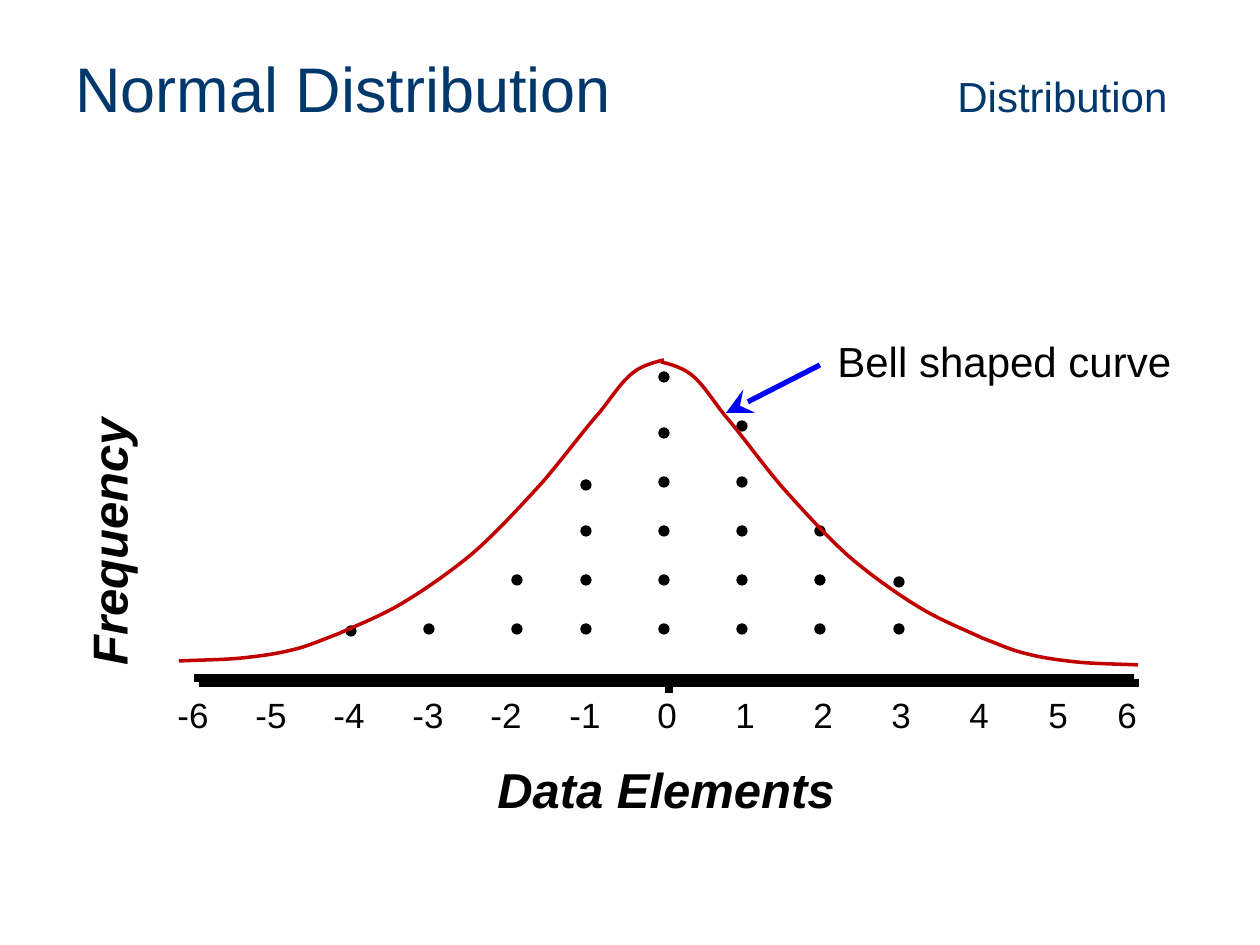
from lxml.etree import SubElement
from pptx import Presentation
from pptx.dml.color import RGBColor
from pptx.enum.shapes import MSO_CONNECTOR, MSO_SHAPE
from pptx.enum.text import MSO_ANCHOR, MSO_AUTO_SIZE, PP_ALIGN
from pptx.oxml.ns import qn
from pptx.util import Pt

PX = 914400 // 126
BLACK = RGBColor(0x00, 0x00, 0x00)
NAVY = RGBColor(0x00, 0x38, 0x6B)
BLUE = RGBColor(0x00, 0x00, 0xFF)
RED = RGBColor(0xC0, 0x00, 0x00)

prs = Presentation()
prs.slide_width, prs.slide_height = 1260 * PX, 945 * PX
s = prs.slides.add_slide(prs.slide_layouts[6])


def add_text(x, y, w, h, runs, align=PP_ALIGN.LEFT, color=BLACK, bold=None):
    """Add a one-paragraph text box; runs are (text, size) pairs."""
    sp = s.shapes.add_textbox(x * PX, y * PX, w * PX, h * PX)
    tf = sp.text_frame
    tf.word_wrap = True
    tf.auto_size = MSO_AUTO_SIZE.SHAPE_TO_FIT_TEXT
    p = tf.paragraphs[0]
    p.alignment = align
    for text, size in runs:
        r = p.add_run()
        r.text = text
        r.font.color.rgb = color
        fmt = {"name": "Arial", "size": Pt(size), "bold": bold, "italic": bold}
        for key, value in fmt.items():
            setattr(r.font, key, value)
    return sp


def add_line(x1, y1, x2, y2, color, width):
    """Add a straight line without a shadow."""
    cn = s.shapes.add_connector(MSO_CONNECTOR.STRAIGHT,
                                x1 * PX, y1 * PX, x2 * PX, y2 * PX)
    cn.line.color.rgb = color
    cn.line.width = Pt(width)
    SubElement(cn._element.spPr, qn("a:effectLst"))
    return cn


# Title, with the section name at a tab stop
sp = add_text(63, 38, 1134, 98, [("Normal Distribution", 36), ("\tDistribution", 24)],
              color=NAVY)
sp.text_frame.auto_size = MSO_AUTO_SIZE.NONE
sp.text_frame.vertical_anchor = MSO_ANCHOR.MIDDLE
pPr = sp.text_frame.paragraphs[0]._p.get_or_add_pPr()
tabs = SubElement(pPr, qn("a:tabLst"))
SubElement(tabs, qn("a:tab"), pos=str(882 * PX), algn="l")

# Axis
for x1, y1, x2, y2 in [(199, 683, 1139, 683), (669, 674, 669, 693),
                       (194, 678, 1134, 678)]:
    add_line(x1, y1, x2, y2, BLACK, 4.5)

# Dots: column left, number of dots, top of the highest dot
DOT, BASE, PITCH = 10, 624, 49
columns = [(346, 1, 626), (424, 1, 624), (512, 2, 575), (581, 4, 480),
           (659, 6, 372), (737, 5, 421), (815, 3, 526), (894, 2, 577)]
for x, count, top in columns:
    for y in [BASE - PITCH * i for i in range(count - 1)] + [top]:
        sp = s.shapes.add_shape(MSO_SHAPE.OVAL, x * PX, y * PX, DOT * PX, DOT * PX)
        sp.shadow.inherit = False
        sp.fill.solid()
        sp.fill.fore_color.rgb = BLACK
        sp.line.color.rgb = BLACK
        sp.line.width = Pt(0.75)

# Axis titles
sp = add_text(-51, 506, 319, 72, [("Frequency", 28)], PP_ALIGN.CENTER, bold=True)
sp.rotation = 270
add_text(200, 753, 932, 72, [("Data Elements", 28)], PP_ALIGN.CENTER, bold=True)

# Axis labels
for n in range(-6, 7):
    if n < 0:
        x, w = 165 + (n + 6) * 392 // 5, 59
    else:
        x, w = min(645 + n * 391 // 5, 1105), 39
    add_text(x, 687, w, 54, [(str(n), 20)])

# Callout
add_text(825, 329, 363, 63, [("Bell shaped curve", 24)])
cn = add_line(820, 365, 726, 413, BLUE, 3)
SubElement(cn.line._get_or_add_ln(), qn("a:tailEnd"), type="stealth", w="lg", len="lg")

# Bell curve: Bezier control points of the left half, mirrored for the right
left_half = [
    (179, 661), (200, 660), (223, 660), (242, 658), (261, 656), (276, 654),
    (292, 650), (309, 646), (319, 641), (338, 634), (355, 626), (379, 617),
    (401, 604), (423, 591), (449, 573), (472, 554), (495, 534), (519, 508),
    (541, 484), (562, 460), (583, 431), (600, 412), (615, 393), (622, 381),
    (634, 372), (644, 364), (664, 360), (664, 360)]
right_half = [(661 + (664 - x) * 477 / 485, 362 + (y - 360) * 303 / 301)
              for x, y in left_half]
for half in (left_half, right_half):
    points = [(round(x * PX), round(y * PX)) for x, y in half]
    fb = s.shapes.build_freeform(*points[0], scale=1.0)
    fb.add_line_segments(points[1:], close=False)
    sp = fb.convert_to_shape()
    sp.shadow.inherit = False
    sp.fill.background()
    sp.line.color.rgb = RED
    sp.line.width = Pt(2)
    # Turn each three straight segments into one cubic curve
    segments = list(sp._element.iter(qn("a:lnTo")))
    outline = segments[0].getparent()
    for i in range(0, len(segments), 3):
        curve = SubElement(outline, qn("a:cubicBezTo"))
        for segment in segments[i:i + 3]:
            curve.append(segment[0])
            outline.remove(segment)

prs.save("out.pptx")
